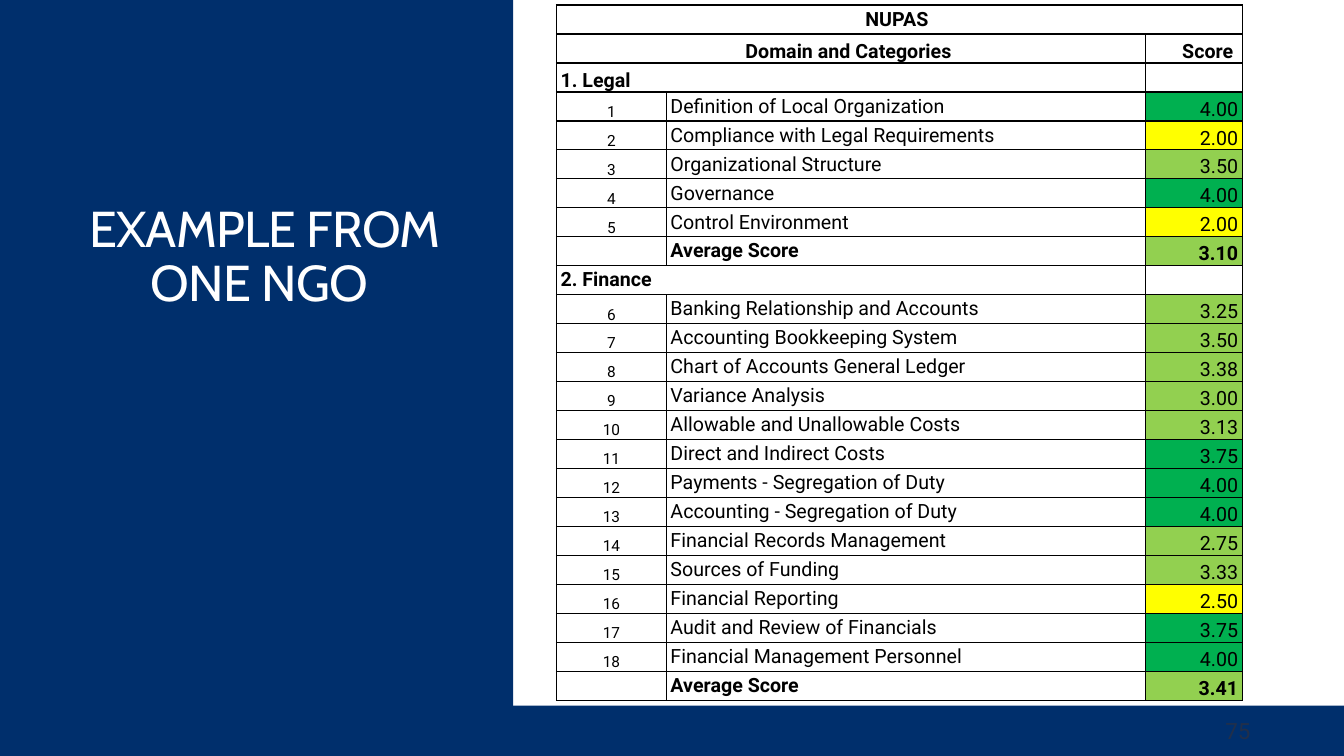
import pptx
import pptx.util
import pptx.dml.color
import pptx.enum.shapes
import pptx.enum.text
import pptx.oxml
import lxml.etree

Inches, Pt = pptx.util.Inches, pptx.util.Pt
Align, Anchor = pptx.enum.text.PP_ALIGN, pptx.enum.text.MSO_ANCHOR
NAVY, WHITE, BLACK = "002F6C", "FFFFFF", "000000"
GREEN, LIME, YELLOW = "00B050", "92D050", "FFFF00"
NS = "http://schemas.openxmlformats.org/drawingml/2006/main"


def color(code):
    return pptx.dml.color.RGBColor.from_string(code)


def fill_cell(cell, text, align, anchor, size=14, bold=False, fill=WHITE):
    cell.margin_left = cell.margin_right = Inches(0.04)
    cell.margin_top = cell.margin_bottom = 0
    cell.vertical_anchor = anchor
    para = cell.text_frame.paragraphs[0]
    para.alignment = align
    font = para.font
    font.name, font.size, font.bold = "Roboto", Pt(size), bold
    font.color.rgb = color(BLACK)
    if text:
        para.add_run().text = text
    else:
        # An empty cell takes its line height from the end mark
        lxml.etree.SubElement(para._p, f"{{{NS}}}endParaRPr", sz=str(size * 100))
    # Borders come before the fill in the cell properties
    props = cell._tc.get_or_add_tcPr()
    for side in ("lnL", "lnR", "lnT", "lnB"):
        props.append(pptx.oxml.parse_xml(
            f'<a:{side} xmlns:a="{NS}" w="12700"><a:solidFill>'
            f'<a:srgbClr val="{BLACK}"/></a:solidFill></a:{side}>'))
    cell.fill.solid()
    cell.fill.fore_color.rgb = color(fill)


deck = pptx.Presentation()
deck.slide_width, deck.slide_height = Inches(13.33), Inches(7.5)
slide = deck.slides.add_slide(deck.slide_layouts[5])
shapes = slide.shapes

# Navy footer and side panel
for left, top, width, height in ((0, 7, 13.33, 0.5), (0, 0, 5.09, 7.5)):
    panel = shapes.add_shape(pptx.enum.shapes.MSO_SHAPE.RECTANGLE, Inches(left),
                             Inches(top), Inches(width), Inches(height))
    panel.shadow.inherit = False
    panel.fill.solid()
    panel.fill.fore_color.rgb = color(NAVY)
    panel.line.fill.background()

# Title, brought in front of the panel
title = shapes.title
title.element.getparent().append(title.element)
title.left, title.top = Inches(0.7), Inches(0.86)
title.width, title.height = Inches(3.85), Inches(2.29)
frame = title.text_frame
frame.text = "EXAMPLE FROM ONE NGO "
frame.word_wrap = True
frame.auto_size = pptx.enum.text.MSO_AUTO_SIZE.NONE
frame.vertical_anchor = Anchor.BOTTOM
para = frame.paragraphs[0]
para.alignment, para.line_spacing = Align.CENTER, 0.9
para.font.name, para.font.size = "Cabin", Pt(36)
para.font.color.rgb = color(WHITE)
para.runs[0].font._element.set("spc", "-50")

# Score table: each domain lists its categories, then its average
domains = [
    ("1. Legal", Anchor.BOTTOM, [
        ("Definition of Local Organization", "4.00"),
        ("Compliance with Legal Requirements", "2.00"),
        ("Organizational Structure", "3.50"),
        ("Governance", "4.00"),
        ("Control Environment", "2.00"),
    ], "3.10"),
    ("2. Finance", Anchor.MIDDLE, [
        ("Banking Relationship and Accounts", "3.25"),
        ("Accounting Bookkeeping System", "3.50"),
        ("Chart of Accounts General Ledger", "3.38"),
        ("Variance Analysis", "3.00"),
        ("Allowable and Unallowable Costs", "3.13"),
        ("Direct and Indirect Costs", "3.75"),
        ("Payments - Segregation of Duty", "4.00"),
        ("Accounting - Segregation of Duty", "4.00"),
        ("Financial Records Management", "2.75"),
        ("Sources of Funding", "3.33"),
        ("Financial Reporting", "2.50"),
        ("Audit and Review of Financials", "3.75"),
        ("Financial Management Personnel", "4.00"),
    ], "3.41"),
]
count = 2 + sum(len(items) + 2 for _, _, items, _ in domains)
table = shapes.add_table(count, 3, Inches(5.52), Inches(0.05),
                         Inches(6.8), Inches(6.9)).table
for column, width in zip(table.columns, (1.09, 4.75, 0.96)):
    column.width = Inches(width)

# Header rows
table.cell(0, 0).merge(table.cell(0, 2))
table.cell(1, 0).merge(table.cell(1, 1))
for col in range(3):
    fill_cell(table.cell(0, col), "" if col else "NUPAS ",
              Align.CENTER, Anchor.MIDDLE, bold=True)
for col, text in enumerate(("Domain and Categories ", "", "Score ")):
    fill_cell(table.cell(1, col), text, Align.RIGHT if col == 2 else Align.CENTER,
              Anchor.BOTTOM, bold=True)

# Domain rows
row, number = 2, 0
for domain, anchor, items, average in domains:
    table.cell(row, 0).merge(table.cell(row, 1))
    for col in range(3):
        fill_cell(table.cell(row, col), "" if col else domain,
                  Align.LEFT, anchor, bold=True)
    for name, score in items + [("Average Score", average)]:
        row += 1
        bold = name == "Average Score"
        number += not bold
        value = float(score)
        shade = GREEN if value > 3.5 else LIME if value > 2.5 else YELLOW
        fill_cell(table.cell(row, 0), "" if bold else str(number),
                  Align.CENTER, Anchor.BOTTOM, size=11)
        fill_cell(table.cell(row, 1), name, Align.LEFT, Anchor.MIDDLE, bold=bold)
        fill_cell(table.cell(row, 2), score, Align.RIGHT, Anchor.BOTTOM,
                  bold=bold, fill=shade)
    row += 1

# Page number
box = shapes.add_textbox(Inches(11.5), Inches(7.05), Inches(1), Inches(0.4))
frame = box.text_frame
frame.word_wrap = True
frame.vertical_anchor = Anchor.MIDDLE
frame.text = "75"
para = frame.paragraphs[0]
para.alignment = Align.RIGHT
para.font.name, para.font.size = "Roboto", Pt(16)
para.font.color.rgb = color("212F4A")

deck.save("out.pptx")
